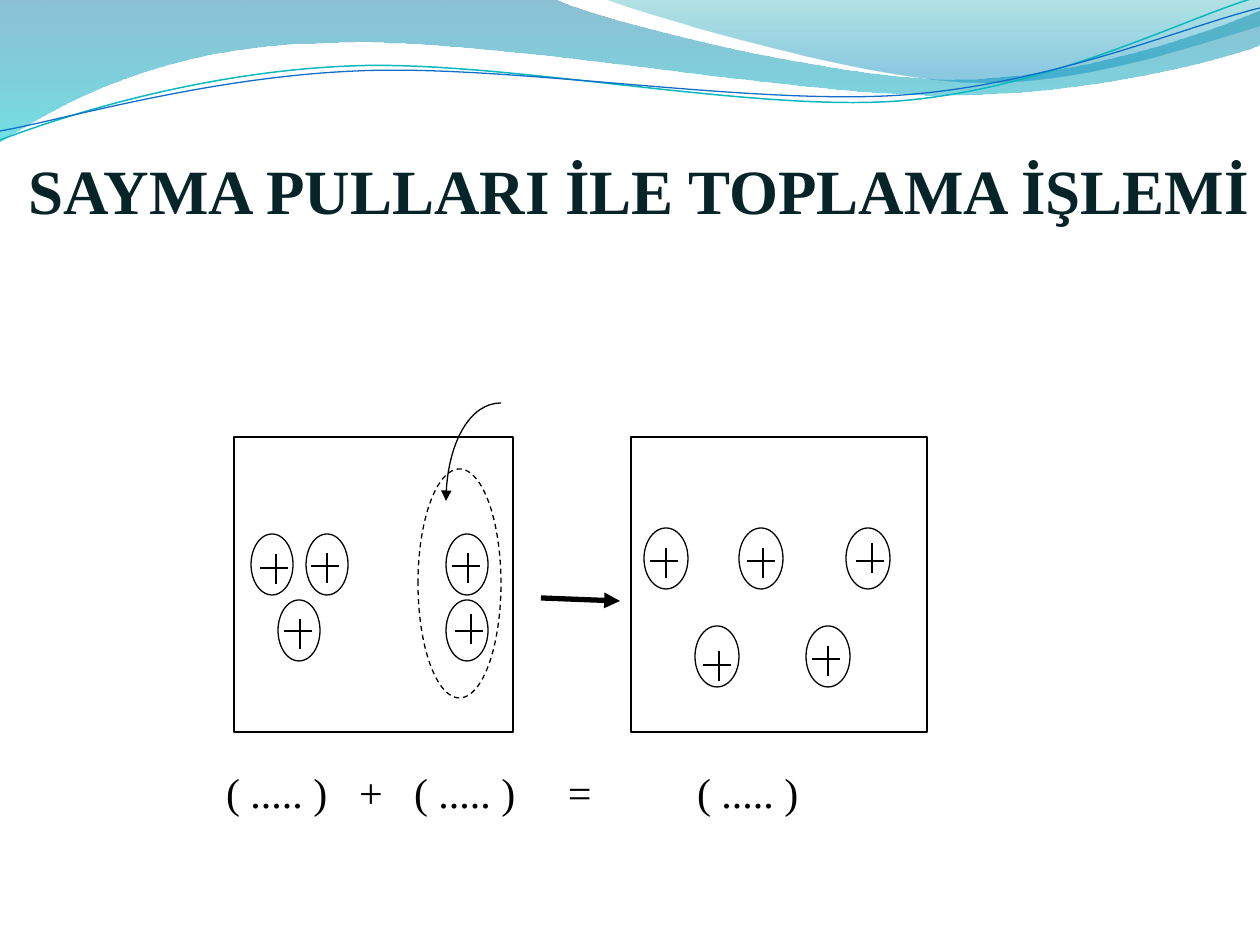
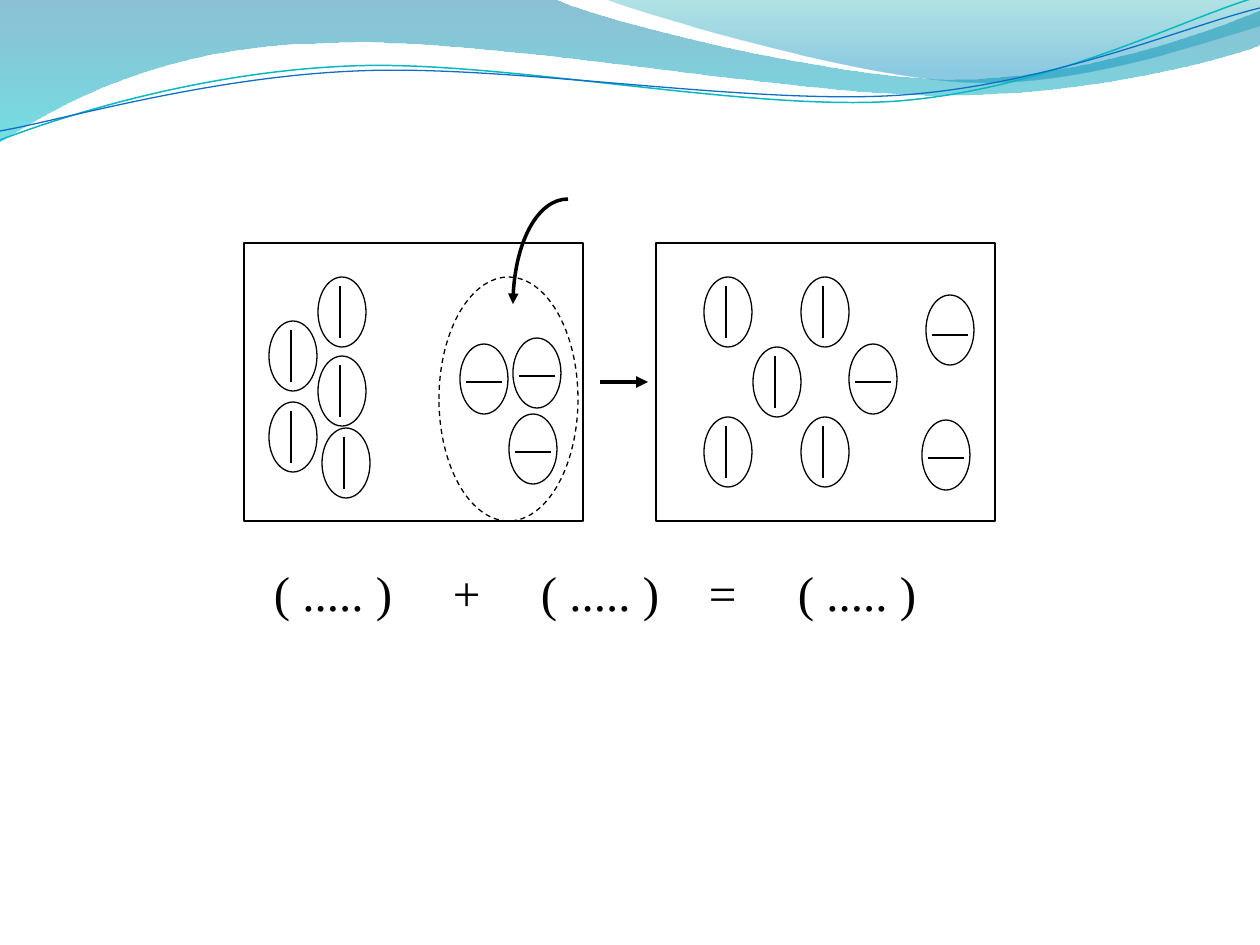
from dataclasses import dataclass
from itertools import product

from lxml import etree
from pptx import Presentation
from pptx import util as u
from pptx.dml.color import RGBColor
from pptx.enum import dml, shapes, text
from pptx.oxml import ns

EMU_PER_PX = 914400 / 126
SLIDE_W, SLIDE_H = 1260, 945


@dataclass(frozen=True)
class Theme:
    font: str = "Times New Roman"
    ink: str = "000000"
    title: str = "072428"
    teal_line: str = "0AB8BF"
    blue_line: str = "0F6FC6"
    # gradient stops: position, colour, opacity in percent
    wide_wave: tuple = ((0, "0074A1", 45), (100, "00C6CF", 55))
    right_wave: tuple = ((0, "00A1A9", 30), (80, "008BBF", 45))
    title_pt: int = 36
    thin_pt: float = 0.75


THEME = Theme()

# A leg of two numbers is a straight line; one of six is a cubic curve.
WIDE_WAVE = [(0, 0), (554, -1), (600, 21, 837, 79, 955, 79),
             (1075, 79, 1207, 33, 1260, 11), (1261, 45),
             (1237, 55, 1096, 96, 940, 95), (784, 95, 481, 35, 324, 43),
             (163, 45, 58, 105, -1, 142)]
RIGHT_WAVE = [(604, -1), (641, 14, 859, 78, 969, 82),
              (1079, 87, 1211, 40, 1260, 26), (1260, 0)]
TEAL_CURVE = [(0, 140), (60, 117, 199, 72, 349, 66),
              (498, 59, 747, 112, 898, 101), (1050, 89, 1182, 19, 1257, -3)]
BLUE_CURVE = [(0, 131), (59, 121, 207, 77, 357, 71),
              (508, 64, 752, 106, 903, 95), (1053, 84, 1186, 26, 1260, 8)]


def px(length):
    return u.Emu(round(length * EMU_PER_PX))


def rgb(colour):
    return RGBColor.from_string(colour)


def add_child(parent, tag, **attributes):
    child = etree.SubElement(parent, ns.qn(tag))
    for key, value in attributes.items():
        child.set(key, str(value))
    return child


def style_line(line, colour=THEME.ink, width=THEME.thin_pt):
    line.color.rgb = rgb(colour)
    line.width = u.Pt(width)


def add_arrowhead(shape):
    add_child(shape._element.spPr.find(ns.qn("a:ln")), "a:tailEnd", type="triangle")


def bend_legs(outline, legs):
    """Turn each three straight segments of a six-number leg into one cubic curve."""
    segments = iter(list(outline._element.iter(ns.qn("a:lnTo"))))
    for leg in legs[1:]:
        first = next(segments)
        if len(leg) == 6:
            first.tag = ns.qn("a:cubicBezTo")
            for _ in range(2):
                control = next(segments)
                first.append(control[0])
                control.getparent().remove(control)


def add_outline(slide, legs, close):
    start, *points = [(px(leg[i]), px(leg[i + 1]))
                      for leg in legs for i in range(0, len(leg), 2)]
    builder = slide.shapes.build_freeform(*start)
    builder.add_line_segments(points, close=close)
    outline = builder.convert_to_shape()
    bend_legs(outline, legs)
    outline.shadow.inherit = False
    return outline


def add_wave(slide, legs, stops):
    wave = add_outline(slide, legs, close=True)
    wave.line.fill.background()
    wave.fill.gradient()
    wave.fill.gradient_angle = 270
    for stop, (position, colour, _) in zip(wave.fill.gradient_stops, stops):
        stop.position = position / 100
        stop.color.rgb = rgb(colour)
    colours = wave._element.spPr.iter(ns.qn("a:srgbClr"))
    for colour, (_, _, opacity) in zip(colours, stops):
        add_child(colour, "a:alpha", val=opacity * 1000)


def add_curve(slide, legs, colour=THEME.ink, width=THEME.thin_pt):
    curve = add_outline(slide, legs, close=False)
    curve.fill.background()
    style_line(curve.line, colour, width)
    return curve


def add_header_waves(slide):
    add_wave(slide, WIDE_WAVE, THEME.wide_wave)
    add_wave(slide, RIGHT_WAVE, THEME.right_wave)
    add_curve(slide, TEAL_CURVE, THEME.teal_line, 0.85)
    add_curve(slide, BLUE_CURVE, THEME.blue_line)


def add_hollow(slide, kind, left, top, width, height):
    hollow = slide.shapes.add_shape(kind, px(left), px(top), px(width), px(height))
    hollow.shadow.inherit = False
    hollow.fill.background()
    style_line(hollow.line)
    return hollow


def add_box(slide, *bounds):
    add_hollow(slide, shapes.MSO_SHAPE.RECTANGLE, *bounds)


def add_added_group(slide, bounds, arrow, arrow_pt=THEME.thin_pt):
    """Dashed ring round the counters being added, with the arrow into it."""
    ring = add_hollow(slide, shapes.MSO_SHAPE.OVAL, *bounds)
    ring.line.dash_style = dml.MSO_LINE.DASH
    add_arrowhead(add_curve(slide, arrow, width=arrow_pt))


def add_stroke(slide, x1, y1, x2, y2, width=THEME.thin_pt):
    stroke = slide.shapes.add_connector(
        shapes.MSO_CONNECTOR.STRAIGHT, px(x1), px(y1), px(x2), px(y2))
    style_line(stroke.line, width=width)
    add_child(stroke._element.spPr, "a:effectLst")
    return stroke


def add_plus_counter(slide, left, top, width, sign_x, sign_y, stem_y):
    """Sign and stem offsets are measured from the counter's top left corner."""
    add_hollow(slide, shapes.MSO_SHAPE.OVAL, left, top, width, 61)
    x, y = left + sign_x, top + sign_y
    add_stroke(slide, x, y, x + 28, y)
    add_stroke(slide, x + 16, top + stem_y, x + 16, top + stem_y + 30)


def add_upright_counter(slide, left, top):
    """Counter turned a quarter, so its sign stands; given by its unturned corner."""
    counter = add_hollow(slide, shapes.MSO_SHAPE.OVAL, left, top, 70, 48)
    counter.rotation = 90
    add_stroke(slide, left + 33, top - 2, left + 33, top + 50)


def add_lying_counter(slide, left, top, sign_y=38):
    add_hollow(slide, shapes.MSO_SHAPE.OVAL, left, top, 48, 70)
    add_stroke(slide, left + 6, top + sign_y, left + 42, top + sign_y)


def add_textbox(slide, bounds, inset):
    frame = slide.shapes.add_textbox(*map(px, bounds)).text_frame
    frame.word_wrap = True
    frame.margin_left, frame.margin_right = px(inset), 0
    return frame


def add_run(paragraph, words, size, colour=THEME.ink, bold=False):
    run = paragraph.add_run()
    run.text = words
    run.font.name, run.font.size, run.font.bold = THEME.font, u.Pt(size), bold
    run.font.color.rgb = rgb(colour)


def add_title(slide, words):
    frame = add_textbox(slide, (0, 145, SLIDE_W, 89), 29)
    frame.vertical_anchor = text.MSO_ANCHOR.MIDDLE
    add_run(frame.paragraphs[0], words, THEME.title_pt, THEME.title, bold=True)


def add_equation(slide, bounds, inset, size, stops):
    """Blank sum whose four later terms stand at tab stops."""
    paragraph = add_textbox(slide, bounds, inset).paragraphs[0]
    paragraph.space_after = u.Pt(10)
    tabs = add_child(paragraph._p.get_or_add_pPr(), "a:tabLst")
    for stop in stops:
        add_child(tabs, "a:tab", pos=px(stop), algn="l")
    blank = "( ..... )"
    add_run(paragraph, "\t".join([blank, "+", blank, "=", blank]), size)


def build_positive_sum(slide):
    add_title(slide, "SAYMA PULLARI İLE TOPLAMA İŞLEMİ")
    add_equation(slide, (203, 760, 824, 63), 23, 24, (133, 188, 342, 471))
    add_added_group(slide, (418, 469, 83, 229),
                    [(501, 403), (470, 403, 446, 447, 446, 501)])
    addends = [(446, 534, 6, 32, 19), (446, 600, 9, 31, 14), (306, 534, 5, 32, 19),
               (251, 534, 9, 34, 20), (278, 600, 6, 31, 19)]
    total = [(644, 528, 6, 33, 20), (739, 528, 8, 33, 20), (846, 528, 10, 33, 15),
             (695, 626, 8, 39, 25), (806, 626, 6, 33, 20)]
    for width, counters in ((42, addends), (44, total)):
        for left, top, *sign in counters:
            add_plus_counter(slide, left, top, width, *sign)
    add_box(slide, 234, 437, 279, 295)
    add_box(slide, 631, 437, 296, 295)
    add_arrowhead(add_stroke(slide, 541, 598, 620, 601, 3))


def build_negative_sum(slide):
    add_added_group(slide, (439, 277, 139, 244),
                    [(568, 199), (538, 199, 513, 246, 513, 304)], 2)
    add_equation(slide, (174, 556, 784, 105), 100, 28, (179, 267, 435, 524))
    upright = [(258, 332), (258, 413), (307, 288), (307, 367), (311, 439),
               (742, 358), *product((693, 790), (288, 428))]
    lying = [(509, 414), (460, 344), (513, 338), (922, 420), (849, 344),
             (926, 295, 40)]
    for corner in upright:
        add_upright_counter(slide, *corner)
    for counter in lying:
        add_lying_counter(slide, *counter)
    for left in (244, 656):
        add_box(slide, left, 243, 339, 278)
    add_arrowhead(add_stroke(slide, 600, 382, 648, 382, 2.25))


def main():
    deck = Presentation()
    deck.slide_width, deck.slide_height = px(SLIDE_W), px(SLIDE_H)
    for build in (build_positive_sum, build_negative_sum):
        slide = deck.slides.add_slide(deck.slide_layouts[6])
        add_header_waves(slide)
        build(slide)
    deck.save("out.pptx")


if __name__ == "__main__":
    main()
